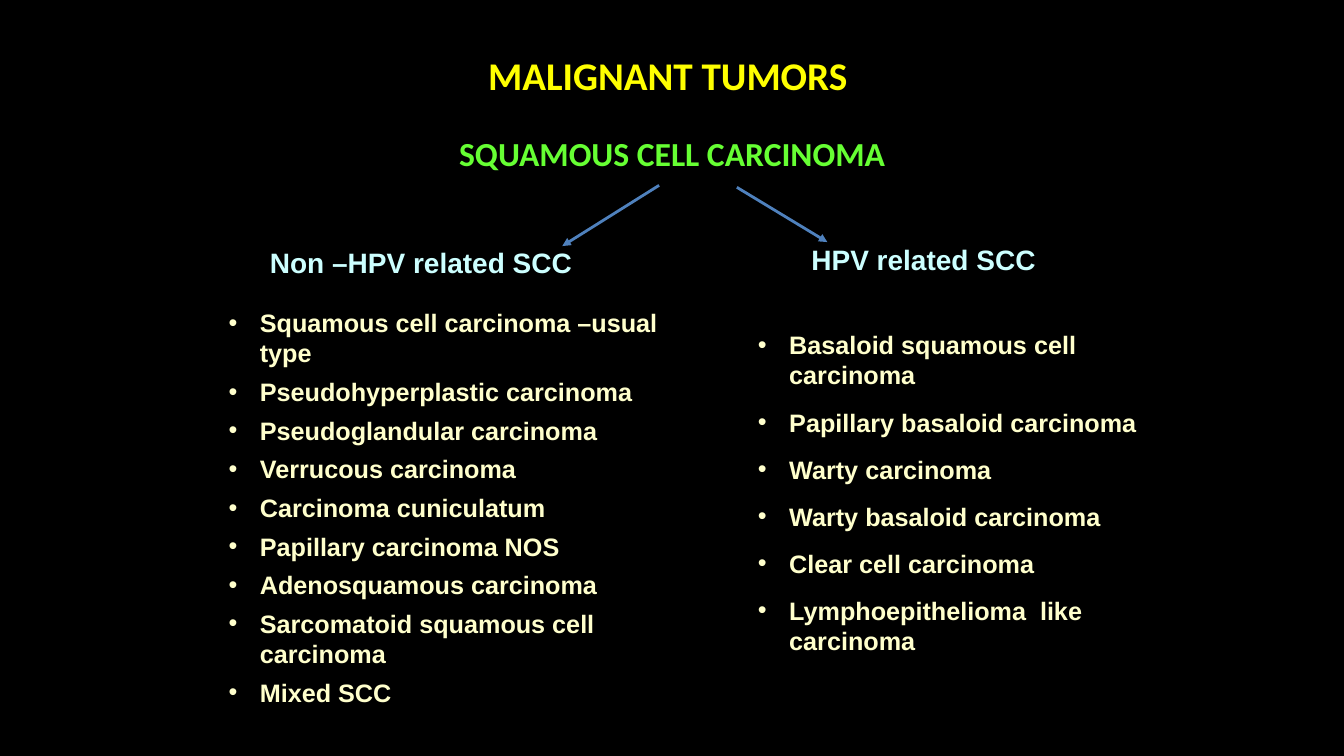
import dataclasses

import lxml.etree
import pptx
import pptx.dml.color
import pptx.enum.shapes
import pptx.enum.text
import pptx.oxml
import pptx.oxml.ns
import pptx.shapes.connector
import pptx.slide
import pptx.text.text
import pptx.util

Cm = pptx.util.Cm
Pt = pptx.util.Pt
Color = pptx.dml.color.RGBColor
Align = pptx.enum.text.PP_ALIGN
Anchor = pptx.enum.text.MSO_ANCHOR


@dataclasses.dataclass(frozen=True)
class TextStyle:
    font: str
    size: int
    color: str


@dataclasses.dataclass(frozen=True)
class Theme:
    background: str = "000000"
    arrow: str = "4F81BD"
    arrow_width: int = 2
    title: TextStyle = TextStyle("Calibri", 28, "FFFF00")
    subtitle: TextStyle = TextStyle("Calibri", 24, "66FF33")
    group: TextStyle = TextStyle("Arial", 20, "CCFFFF")
    item: TextStyle = TextStyle("Arial", 18, "FFFFCC")


@dataclasses.dataclass(frozen=True)
class TextBlock:
    """Paragraphs in one box; the box is left, top, width, height in cm."""
    box: tuple[float, float, float, float]
    style: TextStyle
    lines: tuple[str, ...]
    paragraph_format: dict[str, object] = dataclasses.field(default_factory=dict)
    anchor: Anchor = Anchor.TOP
    bulleted: bool = False


@dataclasses.dataclass(frozen=True)
class Arrow:
    """Start and end points in cm."""
    start: tuple[float, float]
    end: tuple[float, float]


THEME = Theme()
BULLET_INDENT = Cm(0.79)

TEXT_BLOCKS = (
    TextBlock((5.51, 0.36, 22.86, 3.18), THEME.title, ("MALIGNANT TUMORS ",),
              {"alignment": Align.CENTER, "line_spacing": 0.9}, Anchor.MIDDLE),
    TextBlock((5.51, 3.02, 22.86, 1.9), THEME.subtitle, ("SQUAMOUS CELL CARCINOMA",),
              {"alignment": Align.CENTER, "line_spacing": 1.2, "space_before": Pt(10)}),
    TextBlock((6.55, 6.07, 9.09, 1.12), THEME.group, ("Non –HPV related SCC",)),
    TextBlock((19.25, 5.99, 8.05, 1.12), THEME.group, ("HPV related SCC",),
              {"alignment": Align.CENTER}),
    TextBlock((5.51, 7.62, 11.43, 11.2), THEME.item, (
        "Squamous cell carcinoma –usual type",
        "Pseudohyperplastic carcinoma",
        "Pseudoglandular carcinoma",
        "Verrucous carcinoma",
        "Carcinoma cuniculatum",
        "Papillary carcinoma NOS",
        "Adenosquamous carcinoma",
        "Sarcomatoid squamous cell carcinoma",
        "Mixed SCC",
    ), {"space_after": Pt(6)}, bulleted=True),
    TextBlock((18.85, 8.18, 10.36, 8.56), THEME.item, (
        "Basaloid squamous cell carcinoma",
        "Papillary basaloid carcinoma",
        "Warty carcinoma",
        "Warty basaloid carcinoma",
        "Clear cell carcinoma",
        "Lymphoepithelioma  like carcinoma",
    ), {"space_after": Pt(12)}, bulleted=True),
)

ARROWS = (
    Arrow((16.61, 4.67), (14.17, 6.2)),
    Arrow((18.57, 4.72), (20.85, 6.1)),
)


def set_attributes(target: object, values: dict[str, object]) -> None:
    for name, value in values.items():
        setattr(target, name, value)


def add_bullet(paragraph: pptx.text.text._Paragraph) -> None:
    properties = paragraph._p.get_or_add_pPr()
    properties.set("marL", str(BULLET_INDENT))
    properties.set("indent", str(-BULLET_INDENT))
    for tag, name, value in (("a:buFont", "typeface", "Arial"), ("a:buChar", "char", "•")):
        child = lxml.etree.SubElement(properties, pptx.oxml.ns.qn(tag))
        child.set(name, value)


def add_text_block(slide: pptx.slide.Slide, block: TextBlock) -> None:
    shape = slide.shapes.add_textbox(*map(Cm, block.box))
    frame = shape.text_frame
    set_attributes(frame, {"word_wrap": True, "vertical_anchor": block.anchor})
    frame.text = "\n".join(block.lines)
    for paragraph in frame.paragraphs:
        set_attributes(paragraph, block.paragraph_format)
        if block.bulleted:
            add_bullet(paragraph)
        font = paragraph.runs[0].font
        set_attributes(font, {"name": block.style.font, "size": Pt(block.style.size), "bold": True})
        font.color.rgb = Color.from_string(block.style.color)


def add_arrow(slide: pptx.slide.Slide, arrow: Arrow) -> pptx.shapes.connector.Connector:
    connector = slide.shapes.add_connector(
        pptx.enum.shapes.MSO_CONNECTOR.STRAIGHT, *map(Cm, arrow.start + arrow.end))
    connector.line.width = Pt(THEME.arrow_width)
    connector.line.color.rgb = Color.from_string(THEME.arrow)
    line = connector.line._get_or_add_ln()
    lxml.etree.SubElement(line, pptx.oxml.ns.qn("a:tailEnd")).set("type", "triangle")
    lxml.etree.SubElement(connector._element.spPr, pptx.oxml.ns.qn("a:effectLst"))
    return connector


def main() -> None:
    presentation = pptx.Presentation()
    set_attributes(presentation, {"slide_width": Cm(33.87), "slide_height": Cm(19.05)})
    slide = presentation.slides.add_slide(presentation.slide_layouts[6])
    slide.background.fill.solid()
    slide.background.fill.fore_color.rgb = Color.from_string(THEME.background)
    for block in TEXT_BLOCKS:
        add_text_block(slide, block)
    for arrow in ARROWS:
        add_arrow(slide, arrow)
    presentation.save("out.pptx")


if __name__ == "__main__":
    main()
